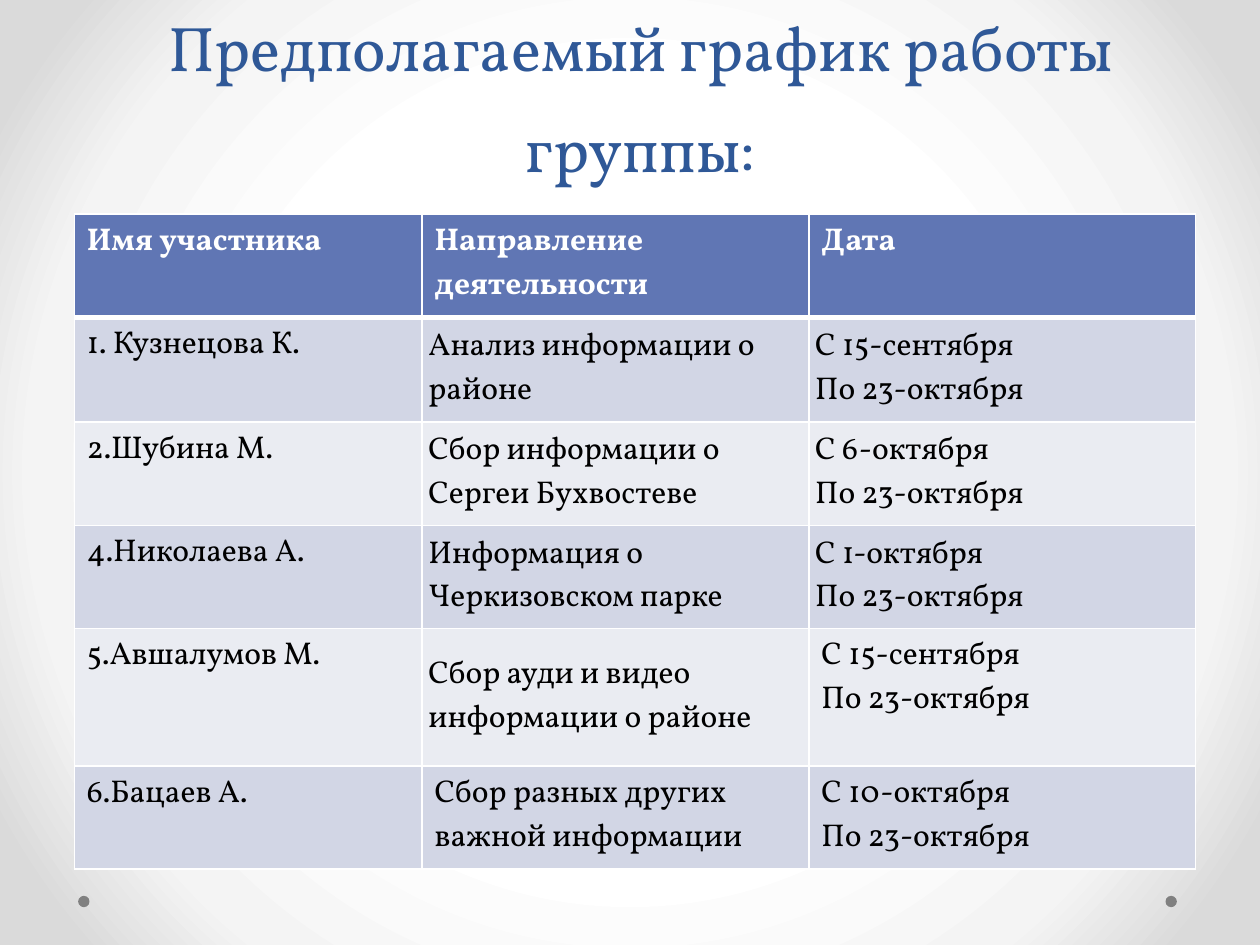
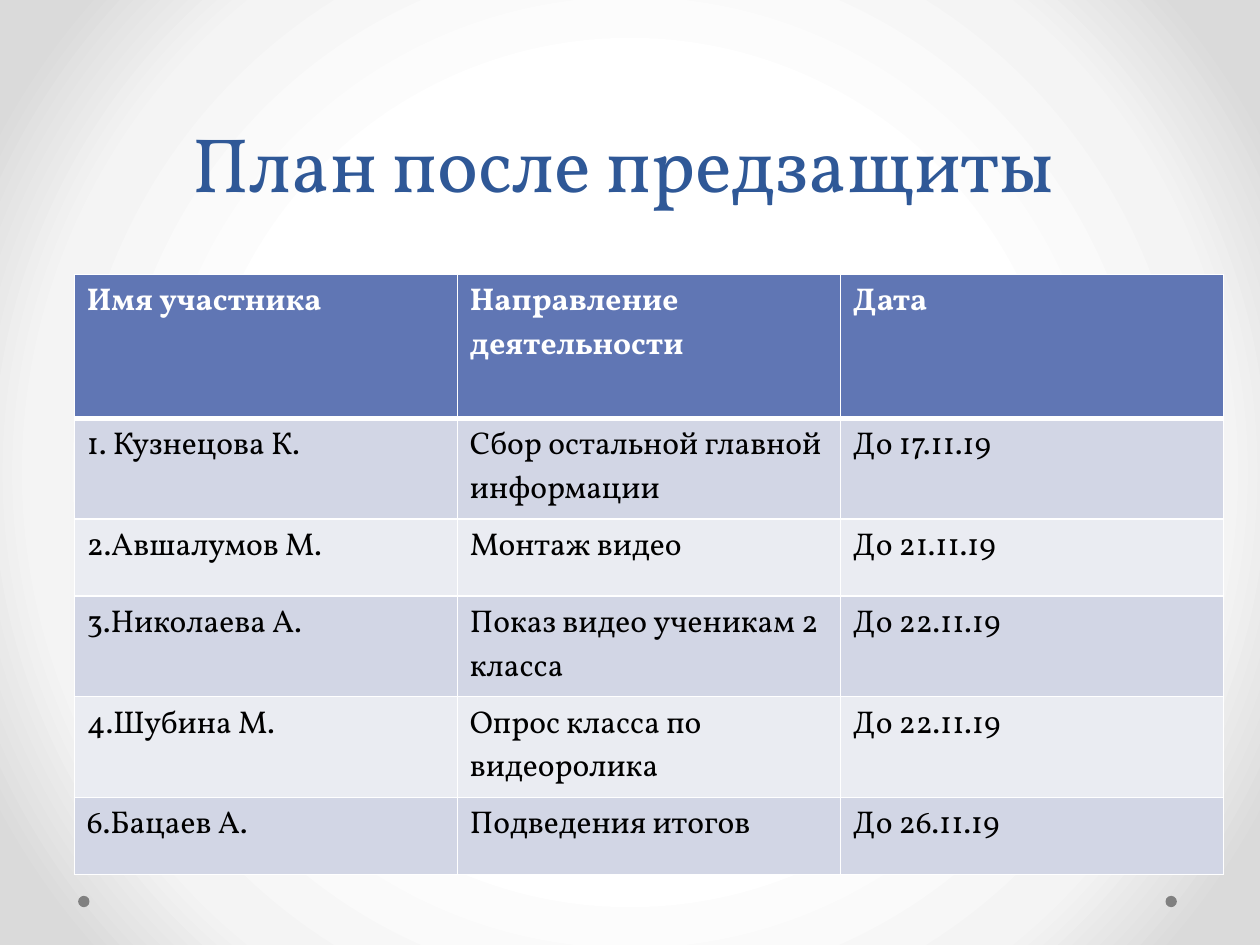
"""Build two schedule slides, each with a title and a table of participants."""
from pptx import Presentation, util as u
from pptx.dml.color import RGBColor
from pptx.enum import shapes, text
from pptx.oxml import parse_xml
from pptx.oxml.ns import nsdecls

FONT = "Vollkorn"
TITLE = RGBColor(0x2F, 0x58, 0x97)
HEADER = RGBColor(0x60, 0x76, 0xB4)
BANDS = [RGBColor(0xEA, 0xEC, 0xF2), RGBColor(0xD2, 0xD6, 0xE5)]
WHITE = RGBColor(0xFF, 0xFF, 0xFF)
BLACK = RGBColor(0, 0, 0)
GREY = RGBColor(0x80, 0x80, 0x80)
STOPS = [(50, WHITE), (76, RGBColor(0xF4, 0xF4, 0xF4)), (92, RGBColor(0xDA, 0xDA, 0xDA))]
HEADINGS = ["Имя участника", "Направление деятельности", "Дата"]

SLIDES = [
    dict(
        title="Предполагаемый график работы группы:", size=36,
        title_at=(0.75, 0.13, 8.67, 1.39), table_at=(0.59, 1.7, 8.9, 5.2),
        cols=[2.76, 3.07, 3.07], heights=[0.82, 0.83, 0.82, 0.82, 1.09, 0.82],
        last_tight_row={1: 4, 2: 3},
        rows=[
            ["1. Кузнецова К.", "Анализ информации о районе", "С 15-сентября\nПо 23-октября"],
            ["2.Шубина М.", "Сбор информации о Сергеи Бухвостеве", "С 6-октября\nПо 23-октября"],
            ["4.Николаева А.", "Информация о Черкизовском парке", "С 1-октября\vПо 23-октября"],
            ["5.Авшалумов М.", "Сбор ауди и видео информации о районе", "С 15-сентября\nПо 23-октября"],
            ["6.Бацаев А.", "Сбор разных других важной информации", "С 10-октября\nПо 23-октября"],
        ],
    ),
    dict(
        title="План после предзащиты ", size=44,
        title_at=(0.51, 0.13, 9, 1.57), table_at=(0.59, 2.18, 9.13, 4.76),
        cols=[3.04] * 3, heights=[1.14, 0.8, 0.61, 0.8, 0.8, 0.61],
        last_tight_row={},
        rows=[
            ["1. Кузнецова К.", "Сбор остальной главной информации", "До 17.11.19"],
            ["2.Авшалумов М.", "Монтаж видео", "До 21.11.19"],
            ["3.Николаева А.", "Показ видео ученикам 2 класса", "До 22.11.19"],
            ["4.Шубина М.", "Опрос класса по видеоролика", "До 22.11.19"],
            ["6.Бацаев А.", "Подведения итогов", "До 26.11.19"],
        ],
    ),
]


def style(tf, **font):
    for p in tf.paragraphs:
        for r in p.runs:
            r.font.color.rgb = font["color"]
            for name in ("name", "size", "bold"):
                setattr(r.font, name, font[name])


def border(cell, side, width):
    cell._tc.get_or_add_tcPr().append(parse_xml(
        f'<a:ln{side} {nsdecls("a")} w="{u.Pt(width)}"><a:solidFill>'
        f'<a:srgbClr val="{WHITE}"/></a:solidFill></a:ln{side}>'))


prs = Presentation()
prs.slide_width, prs.slide_height = u.Inches(10), u.Inches(7.5)
layout = prs.slide_layouts[5]

master = prs.slide_master.element.cSld
stops = "".join(f'<a:gs pos="{pos * 1000}"><a:srgbClr val="{c}"/></a:gs>' for pos, c in STOPS)
if master.bg is not None:
    master.remove(master.bg)
master.insert(0, parse_xml(
    f'<p:bg {nsdecls("p", "a")}><p:bgPr><a:gradFill rotWithShape="1"><a:gsLst>{stops}</a:gsLst>'
    '<a:path path="circle"><a:fillToRect l="50000" t="50000" r="50000" b="50000"/></a:path>'
    '</a:gradFill><a:effectLst/></p:bgPr></p:bg>'))

for data in SLIDES:
    s = prs.slides.add_slide(layout)
    if data is SLIDES[0]:
        for x in (9.25, 0.62):
            dot = s.shapes.add_shape(shapes.MSO_SHAPE.OVAL, *map(u.Inches, (x, 7.11, 0.09, 0.09)))
            dot.shadow.inherit = False
            dot.fill.solid()
            dot.fill.fore_color.rgb = GREY
            dot.line.fill.background()
            master.spTree.append(dot._element)

    title = s.shapes.title
    for name, value in zip(("left", "top", "width", "height"), data["title_at"]):
        setattr(title, name, u.Inches(value))
    tf = title.text_frame
    tf.text = data["title"]
    for name, value in dict(word_wrap=True, auto_size=text.MSO_AUTO_SIZE.NONE,
                            vertical_anchor=text.MSO_ANCHOR.BOTTOM).items():
        setattr(tf, name, value)
    p = tf.paragraphs[0]
    p.alignment = text.PP_ALIGN.CENTER
    p.line_spacing = u.Pt(58)
    style(tf, name=FONT, size=u.Pt(data["size"]), bold=False, color=TITLE)

    rows = [HEADINGS] + data["rows"]
    table = s.shapes.add_table(len(rows), len(HEADINGS), *map(u.Inches, data["table_at"])).table
    for col, width in zip(table.columns, data["cols"]):
        col.width = u.Inches(width)
    for row, height in zip(table.rows, data["heights"]):
        row.height = u.Inches(height)
    for i, row in enumerate(rows):
        for j, value in enumerate(row):
            cell = table.cell(i, j)
            cell.text = value
            style(cell.text_frame, name=FONT, size=u.Pt(18), bold=i == 0,
                  color=BLACK if i else WHITE)
            if 0 < i <= data["last_tight_row"].get(j, 0):
                cell.vertical_anchor = text.MSO_ANCHOR.MIDDLE
                for side in ("left", "top", "right", "bottom"):
                    setattr(cell, f"margin_{side}", u.Inches(0.05))
            for side, width in dict(L=1, R=1, T=3 if i == 1 else 1, B=1 if i else 3).items():
                border(cell, side, width)
            cell.fill.solid()
            cell.fill.fore_color.rgb = BANDS[i % 2] if i else HEADER

prs.save("out.pptx")
